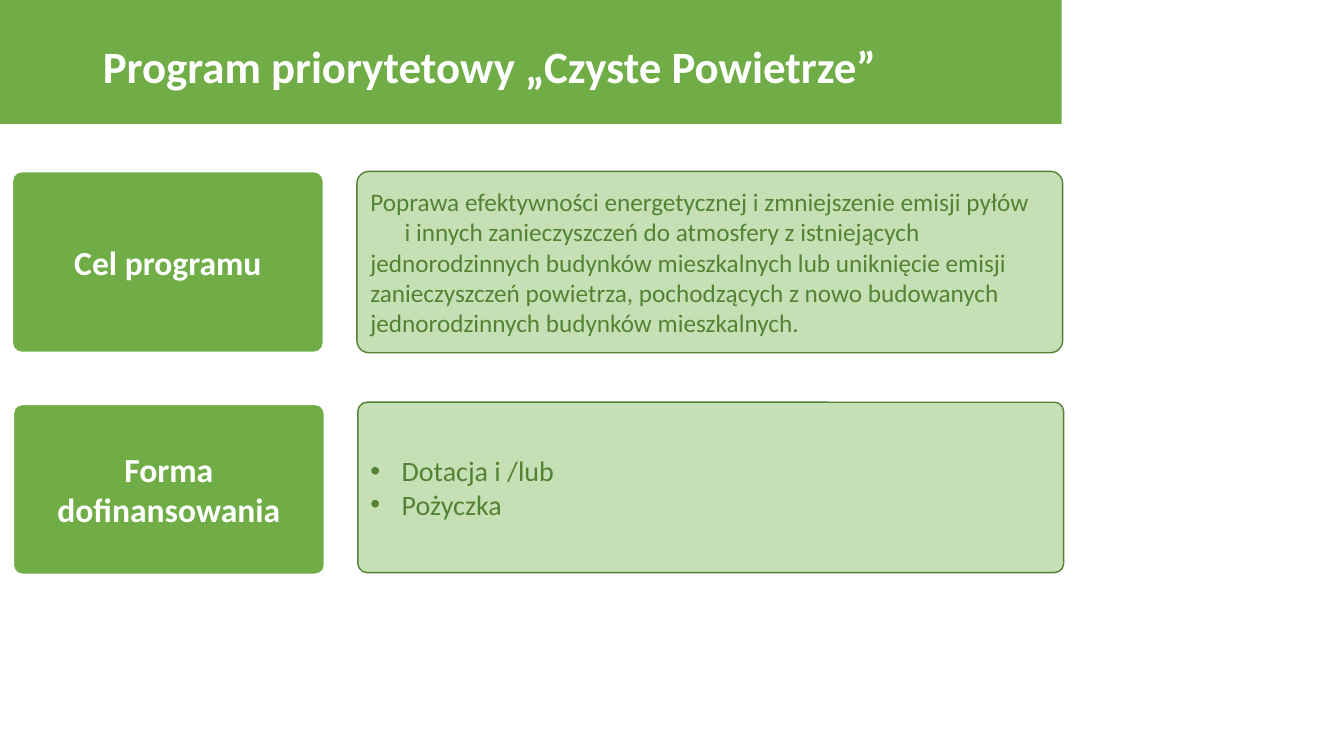
from lxml import etree
from pptx import Presentation
from pptx import util as u
from pptx.dml.color import RGBColor
from pptx.enum import shapes, text
from pptx.oxml.ns import qn

COLORS = {"green": "70AD47", "pale": "C5E0B4", "border": "538035",
          "ink": "548235", "white": "FFFFFF"}


def color(name):
    return RGBColor.from_string(COLORS[name])


def write(frame, lines, size, ink, bold=False, align=text.PP_ALIGN.LEFT,
          spacing=None, bullet=None, indent=0.31, tab=None):
    """Fill a text frame with one paragraph per line."""
    frame.word_wrap = True
    frame.auto_size = text.MSO_AUTO_SIZE.NONE
    frame.vertical_anchor = text.MSO_ANCHOR.MIDDLE
    for index, line in enumerate(lines):
        para = frame.add_paragraph() if index else frame.paragraphs[0]
        para.text = line
        para.alignment = align
        if spacing:
            para.line_spacing = spacing
        props = para._p.get_or_add_pPr()
        if bullet:
            props.set("marL", str(u.Inches(indent)))
            props.set("indent", str(-u.Inches(indent)))
            etree.SubElement(props, qn("a:buFont"), typeface="Arial")
            etree.SubElement(props, qn("a:buChar"), char=bullet)
        if tab:
            stops = etree.SubElement(props, qn("a:tabLst"))
            etree.SubElement(stops, qn("a:tab"), pos=str(u.Inches(tab)), algn="l")
        for span in para.runs:
            span.font.name = "Calibri"
            span.font.size = u.Pt(size)
            span.font.bold = bold
            span.font.color.rgb = color(ink)


class ProgramSlide:
    def __init__(self, deck):
        self.slide = deck.slides.add_slide(deck.slide_layouts[5])

    def shape(self, kind, place, fill, line=None, width=1, corner=None):
        box = self.slide.shapes.add_shape(kind, *map(u.Inches, place))
        box.shadow.inherit = False
        box.fill.solid()
        box.fill.fore_color.rgb = color(fill)
        if line:
            box.line.color.rgb = color(line)
            box.line.width = u.Pt(width)
        else:
            box.line.fill.background()
        if corner:
            box.adjustments[0] = corner
        return box

    def title(self, wording):
        banner = self.shape(shapes.MSO_SHAPE.RECTANGLE, (0, 0, 10.53, 1.23), "green")
        title = self.slide.shapes.title
        title.left, title.top, title.width, title.height = map(
            u.Inches, (0.92, 0.21, 8.67, 0.94))
        write(title.text_frame, [wording], 32, "white", bold=True, spacing=0.9)
        banner.element.addnext(title.element)  # title in front of the banner

    def label(self, wording, place):
        box = self.shape(shapes.MSO_SHAPE.ROUNDED_RECTANGLE, place, "green",
                         "white", 1.5, corner=0.053)
        write(box.text_frame, [wording], 24, "white", bold=True,
              align=text.PP_ALIGN.CENTER)

    def panel(self, lines, place, size, corner, **style):
        box = self.shape(shapes.MSO_SHAPE.ROUNDED_RECTANGLE, place, "pale",
                         "border", 1, corner)
        write(box.text_frame, lines, size, "ink", **style)


def main():
    deck = Presentation()
    deck.slide_width, deck.slide_height = u.Inches(13.33), u.Inches(7.5)
    page = ProgramSlide(deck)
    page.title("Program priorytetowy „Czyste Powietrze”")

    # Programme goal
    page.label("Cel programu", (0.12, 1.7, 3.09, 1.8))
    goal = ("Poprawa efektywności energetycznej i zmniejszenie emisji pyłów\v"
            "\ti innych zanieczyszczeń do atmosfery z istniejących "
            "jednorodzinnych budynków mieszkalnych lub uniknięcie emisji "
            "zanieczyszczeń powietrza, pochodzących z nowo budowanych "
            "jednorodzinnych budynków mieszkalnych.")
    page.panel([goal], (3.54, 1.7, 7, 1.8), 18, 0.067, tab=0.34)

    # Form of funding
    page.label("Forma dofinansowania", (0.13, 4.01, 3.09, 1.69))
    page.panel(["Dotacja i /lub", "Pożyczka"], (3.55, 3.99, 7, 1.69), 20, 0.053,
               bullet="•")

    deck.save("out.pptx")


if __name__ == "__main__":
    main()
